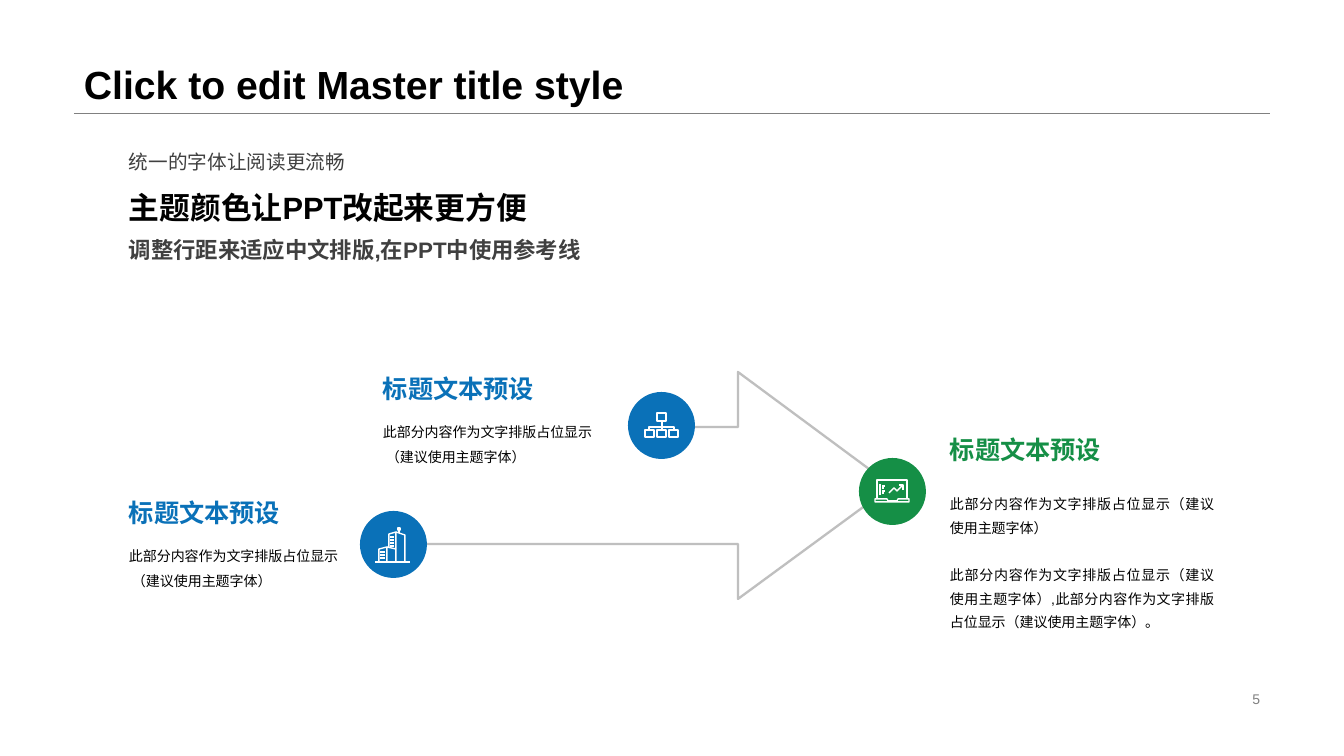
import pptx
import pptx.dml.color
import pptx.enum.shapes
import pptx.enum.text
import pptx.oxml.ns
import pptx.util
from lxml import etree

RGB = pptx.dml.color.RGBColor
BLACK = RGB(0, 0, 0)
DARK = RGB(0x40, 0x40, 0x40)
GREY = RGB(0x80, 0x80, 0x80)
SILVER = RGB(0xBF, 0xBF, 0xBF)
WHITE = RGB(0xFF, 0xFF, 0xFF)
BLUE = RGB(0x0A, 0x71, 0xB8)
GREEN = RGB(0x15, 0x8F, 0x46)

ALIGN = pptx.enum.text.PP_ALIGN
ANCHOR = pptx.enum.text.MSO_ANCHOR
SCALE = 914400 / 100.8

HEADING = "标题文本预设"
CAPTION = "此部分内容作为文字排版占位显示\n （建议使用主题字体）"
NOTE = "此部分内容作为文字排版占位显示（建议使用主题字体）"


def px(n):
    return round(n * SCALE)


def box(left, top, right, bottom):
    return [(left, top), (right, top), (right, bottom), (left, bottom), (left, top)]


class SlideBuilder:
    def __init__(self, prs, font):
        self.s = prs.slides.add_slide(prs.slide_layouts[6])
        self.font = font

    def text(self, x, y, w, h, paragraphs, anchor=ANCHOR.TOP):
        sp = self.s.shapes.add_textbox(px(x), px(y), px(w), px(h))
        tf = sp.text_frame
        tf.word_wrap = True
        tf.vertical_anchor = anchor
        for i, (words, size, color, bold, layout) in enumerate(paragraphs):
            p = tf.add_paragraph() if i else tf.paragraphs[0]
            p.text = words
            for name, value in layout.items():
                setattr(p, name, value)
            style = {"name": self.font, "size": pptx.util.Pt(size), "bold": bold}
            for r in p.runs:
                for name, value in style.items():
                    setattr(r.font, name, value)
                r.font.color.rgb = color
            for br in p._p.findall(pptx.oxml.ns.qn("a:br")):
                etree.SubElement(br, pptx.oxml.ns.qn("a:rPr"), sz=str(size * 100))

    def rule(self, x1, y1, x2, y2, color, width):
        line = self.s.shapes.add_connector(
            pptx.enum.shapes.MSO_CONNECTOR.STRAIGHT, px(x1), px(y1), px(x2), px(y2))
        line.line.color.rgb = color
        line.line.width = pptx.util.Pt(width)
        etree.SubElement(line._element.spPr, pptx.oxml.ns.qn("a:effectLst"))

    def outline(self, strokes, color, width):
        fb = None
        for start, *rest in strokes:
            if fb is None:
                fb = self.s.shapes.build_freeform(*start, scale=SCALE)
            else:
                fb.move_to(*start)
            fb.add_line_segments(rest, close=False)
        sp = fb.convert_to_shape()
        sp.shadow.inherit = False
        sp.fill.background()
        sp.line.color.rgb = color
        sp.line.width = pptx.util.Pt(width)

    def badge(self, x, y, color, icon):
        sp = self.s.shapes.add_shape(
            pptx.enum.shapes.MSO_SHAPE.OVAL, px(x), px(y), px(67), px(67))
        sp.shadow.inherit = False
        sp.fill.solid()
        sp.fill.fore_color.rgb = color
        sp.line.fill.background()
        self.outline([[(x + dx, y + dy) for dx, dy in stroke] for stroke in icon], WHITE, 1)

    def step(self, x, y):
        self.text(x, y, 242, 38, [(HEADING, 18, BLUE, True, {"line_spacing": 0.9})])
        self.text(x, y + 38, 242, 62, [(CAPTION, 10, BLACK, False, {"line_spacing": 1.5})])


ORG_CHART = [
    box(29, 21, 38, 29),
    [(34, 29), (34, 38)],
    [(21, 38), (21, 35), (46, 35), (46, 38)],
    *[box(left, 38, left + 9, 45) for left in (17, 29, 41)],
]

BUILDINGS = [
    [(15, 51), (50, 51)],
    [(19, 51), (19, 38), (27, 36), (27, 51)],
    [(27, 36), (36, 38)],
    [(29, 36), (29, 23), (36, 21), (36, 51)],
    [(36, 21), (45, 24), (45, 51)],
    [(39, 22), (39, 19)],
    box(38, 17, 40, 19),
    *[[(20, y), (25, y)] for y in (41, 44, 47)],
    *[[(30, y), (34, y)] for y in (26, 29, 32, 35)],
]

LAPTOP = [
    [(18, 41), (18, 22), (48, 22), (48, 41)],
    [(16, 41), (28, 41), (29, 43), (38, 43), (39, 41), (50, 41),
     (50, 44), (16, 44), (16, 41)],
    [(21, 26), (21, 37)],
    *[[(23, y), (right, y)] for y, right in ((28, 26), (30, 25), (33, 26), (35, 25))],
    [(30, 35), (35, 30), (38, 33), (44, 27)],
    [(40, 27), (44, 27), (44, 32)],
]

ARROW = [(393, 544), (738, 544), (738, 599), (892, 486),
         (738, 372), (738, 427), (693, 427)]


def main():
    prs = pptx.Presentation()
    prs.slide_width, prs.slide_height = px(1344), px(756)
    b = SlideBuilder(prs, "Arial")

    b.rule(74, 113, 1270, 113, GREY, 0.25)
    b.text(74, 0, 1196, 113, [
        ("Click to edit Master title style", 28, BLACK, True, {"line_spacing": 0.9})],
        ANCHOR.BOTTOM)
    b.text(950, 687, 320, 23, [("5", 10, GREY, False, {"alignment": ALIGN.RIGHT})],
           ANCHOR.MIDDLE)

    b.outline([ARROW], SILVER, 1.63)
    b.badge(628, 392, BLUE, ORG_CHART)
    b.badge(360, 511, BLUE, BUILDINGS)
    b.badge(859, 458, GREEN, LAPTOP)

    body = {"alignment": ALIGN.JUSTIFY, "line_spacing": 1.4}
    b.text(119, 136, 500, 135, [
        ("统一的字体让阅读更流畅", 14, DARK, False, body),
        ("主题颜色让PPT改起来更方便", 22, BLACK, True, body),
        ("调整行距来适应中文排版,在PPT中使用参考线", 16, DARK, True, body)])
    b.step(119, 496)
    b.step(373, 372)
    b.text(940, 484, 284, 156, [
        (NOTE, 10, BLACK, False, body),
        (f"{NOTE},{NOTE}。", 10, BLACK, False,
         {**body, "space_before": pptx.util.Pt(17)})])
    b.text(940, 429, 284, 45, [(HEADING, 18, GREEN, True, {})])

    prs.save("out.pptx")


if __name__ == "__main__":
    main()
